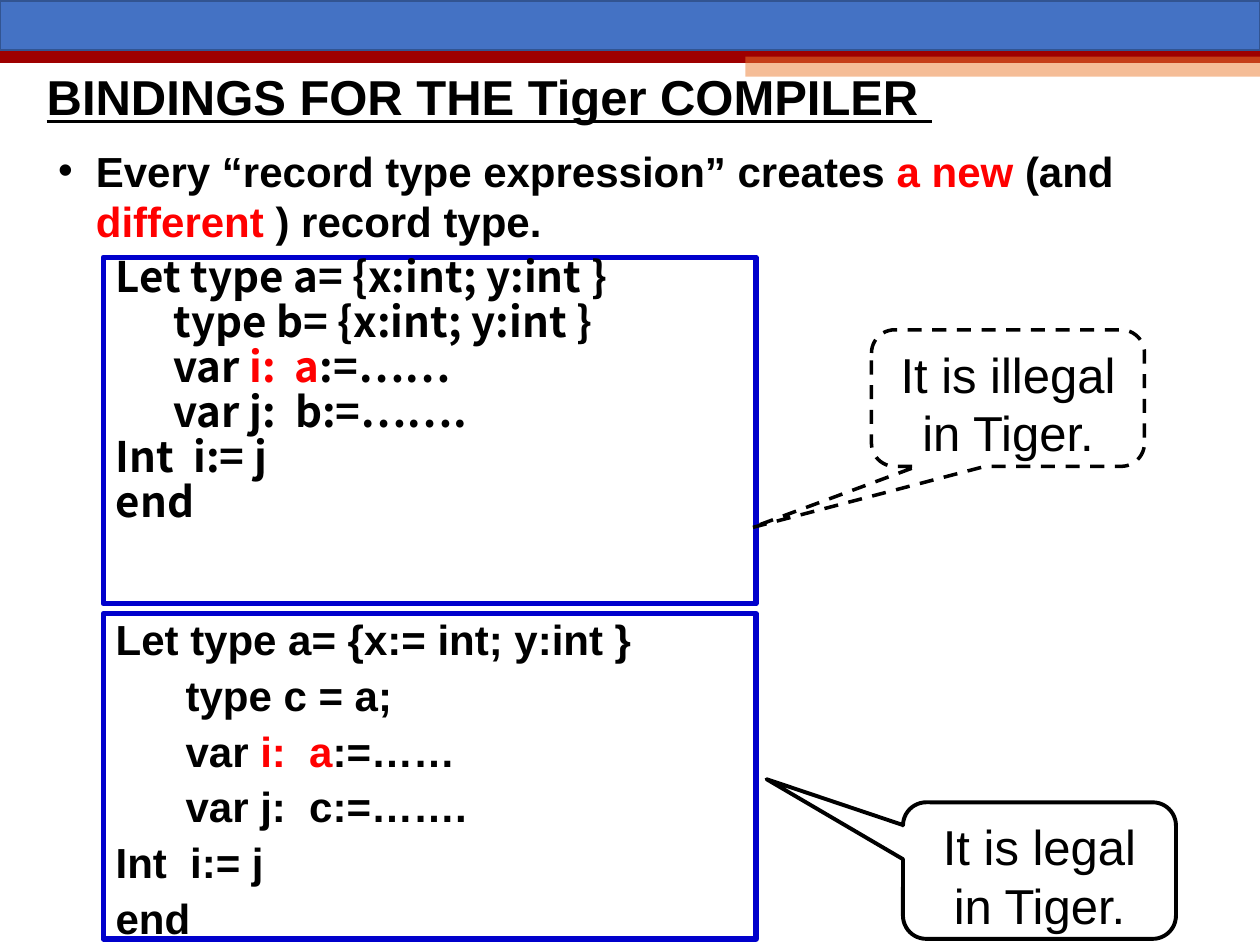
"""Build the slide on record type bindings in the Tiger compiler."""
from dataclasses import dataclass

from lxml import etree
from pptx import Presentation
from pptx.dml.color import RGBColor
from pptx.enum.dml import MSO_LINE
from pptx.enum.shapes import MSO_CONNECTOR, MSO_SHAPE
from pptx.enum.text import MSO_ANCHOR, MSO_AUTO_SIZE, PP_ALIGN
from pptx.oxml.ns import qn
from pptx.util import Pt

RECTANGLE = MSO_SHAPE.RECTANGLE
CALLOUT = MSO_SHAPE.ROUNDED_RECTANGULAR_CALLOUT
STRAIGHT = MSO_CONNECTOR.STRAIGHT
DASH, SOLID = MSO_LINE.DASH, MSO_LINE.SOLID
TOP, MIDDLE = MSO_ANCHOR.TOP, MSO_ANCHOR.MIDDLE
LEFT, CENTER = PP_ALIGN.LEFT, PP_ALIGN.CENTER
NO_FIT = MSO_AUTO_SIZE.NONE
BLACK, RED, NAVY = "000000", "FF0000", "0000CC"
SANS, CJK = "Arial", "Noto Sans CJK SC"


@dataclass
class Box:
    left: float
    top: float
    width: float
    height: float

    def lengths(self) -> tuple:
        """Return the position and size as lengths."""
        return Pt(self.left), Pt(self.top), Pt(self.width), Pt(self.height)


@dataclass
class Line:
    wording: list
    indent: float = 0
    hanging: float = 0


@dataclass
class Style:
    font: str = SANS
    size: float = 24
    bold: bool = True
    underline: bool = False
    spacing: float = 1
    before: float = 0
    align: int = LEFT
    anchor: int = TOP
    top_inset: float = 3.6


@dataclass
class Remark:
    box: Box
    text: str
    pointer: tuple
    weight: float
    dash: int


def color(value: str) -> RGBColor:
    """Turn a hex string into a colour."""
    return RGBColor.from_string(value)


def place(shape, box: Box) -> None:
    """Move and size a placeholder."""
    shape.left, shape.top, shape.width, shape.height = box.lengths()


def outline(shape, value: str, weight: float, dash: int = SOLID) -> None:
    """Leave the shape unfilled and draw its border."""
    shape.fill.background()
    shape.line.color.rgb = color(value)
    shape.line.width = Pt(weight)
    shape.line.dash_style = dash


def write(shape, lines: list[Line], style: Style) -> None:
    """Fill a shape with lines of coloured wording."""
    frame = shape.text_frame
    frame.word_wrap = True
    frame.auto_size = NO_FIT
    frame.vertical_anchor = style.anchor
    frame.margin_top = Pt(style.top_inset)
    for number, line in enumerate(lines):
        paragraph = frame.add_paragraph() if number else frame.paragraphs[0]
        paragraph.alignment = style.align
        paragraph.line_spacing = style.spacing
        paragraph.space_before = Pt(style.before)
        properties = paragraph._p.get_or_add_pPr()
        properties.set("marL", str(Pt(line.indent)))
        properties.set("indent", str(-Pt(line.hanging)))
        if not line.hanging:
            etree.SubElement(properties, qn("a:buNone"))
        for text, value in line.wording:
            run = paragraph.add_run()
            run.text = text
            font = run.font
            font.name, font.size = style.font, Pt(style.size)
            font.bold, font.underline = style.bold, style.underline
            font.color.rgb = color(value)


def add_bar(slide, box: Box, value: str):
    """Add a plain filled bar."""
    bar = slide.shapes.add_shape(RECTANGLE, *box.lengths())
    bar.shadow.inherit = False
    bar.fill.solid()
    bar.fill.fore_color.rgb = color(value)
    bar.line.fill.background()
    return bar


def add_header(slide) -> None:
    """Draw the rule and the two bars along the top edge."""
    rule = slide.shapes.add_connector(STRAIGHT, Pt(0), Pt(32), Pt(720), Pt(32))
    rule.line.color.rgb = color("9E0000")
    rule.line.width = Pt(7.5)
    etree.SubElement(rule._element.spPr, qn("a:effectLst"))
    accent = add_bar(slide, Box(426, 32.4, 294, 11.5), "ED7D31")
    accent_color = accent._element.spPr.find(qn("a:solidFill"))[0]
    etree.SubElement(accent_color, qn("a:alpha"), val="50000")
    band = add_bar(slide, Box(0, 0.5, 720, 28), "4472C4")
    band.line.color.rgb = color("325491")
    band.line.width = Pt(1)


def add_remark(slide, remark: Remark) -> None:
    """Add a callout whose pointer aims at a code box."""
    callout = slide.shapes.add_shape(CALLOUT, *remark.box.lengths())
    callout.shadow.inherit = False
    outline(callout, BLACK, remark.weight, remark.dash)
    for index, value in enumerate(remark.pointer):
        callout.adjustments[index] = value
    style = Style(size=28, bold=False, align=CENTER, anchor=MIDDLE, top_inset=9)
    write(callout, [Line([(remark.text, BLACK)])], style)


def code_lines(record: str, alias: str, second: str, indent: float) -> list[Line]:
    """Return the lines of one code sample."""
    return [
        Line([(f"Let type a= {record}", BLACK)]),
        Line([(alias, BLACK)], indent),
        Line([("var ", BLACK), ("i:  a", RED), (":=……", BLACK)], indent),
        Line([(f"var j:  {second}:=…….", BLACK)], indent),
        Line([("Int  i:= j", BLACK)]),
        Line([("end", BLACK)]),
    ]


def main() -> None:
    """Build and save the slide."""
    presentation = Presentation()
    presentation.slide_width, presentation.slide_height = Pt(720), Pt(540)
    slide = presentation.slides.add_slide(presentation.slide_layouts[3])
    title, rule_text, illegal_code = slide.placeholders
    add_header(slide)

    place(title, Box(19.5, 31.7, 684, 51))
    heading = Line([("BINDINGS FOR THE Tiger COMPILER ", BLACK)])
    write(title, [heading], Style(size=28, underline=True, spacing=0.9, anchor=MIDDLE))

    place(rule_text, Box(26, 78, 636, 65.5))
    statement = [
        ("Every “record type expression” creates ", BLACK), ("a new ", RED),
        ("(and ", BLACK), ("different ", RED), (") record type.", BLACK),
    ]
    write(rule_text, [Line(statement, 21.6, 21.6)], Style(top_inset=5))

    place(illegal_code, Box(59, 147, 373, 198))
    outline(illegal_code, NAVY, 3)
    illegal = code_lines("{x:int; y:int }", "type b= {x:int; y:int }", "b", 33)
    write(illegal_code, illegal, Style(CJK, spacing=0.8, before=2.7, top_inset=1.5))

    legal_box = Box(59, 350.6, 373, 186)
    legal_code = slide.shapes.add_shape(RECTANGLE, *legal_box.lengths())
    legal_code.shadow.inherit = False
    outline(legal_code, NAVY, 3)
    legal = code_lines("{x:= int; y:int }", "type c = a;", "c", 40)
    write(legal_code, legal, Style(spacing=0.9, before=5.9))

    for remark in (
        Remark(Box(498, 188.5, 156, 78), "It is illegal in Tiger.", (-0.94, 0.95, 0.17), 2, DASH),
        Remark(Box(516, 458.5, 156, 78), "It is legal in Tiger.", (-1, -0.67, 0.17), 2.25, SOLID),
    ):
        add_remark(slide, remark)
    presentation.save("out.pptx")


if __name__ == "__main__":
    main()
